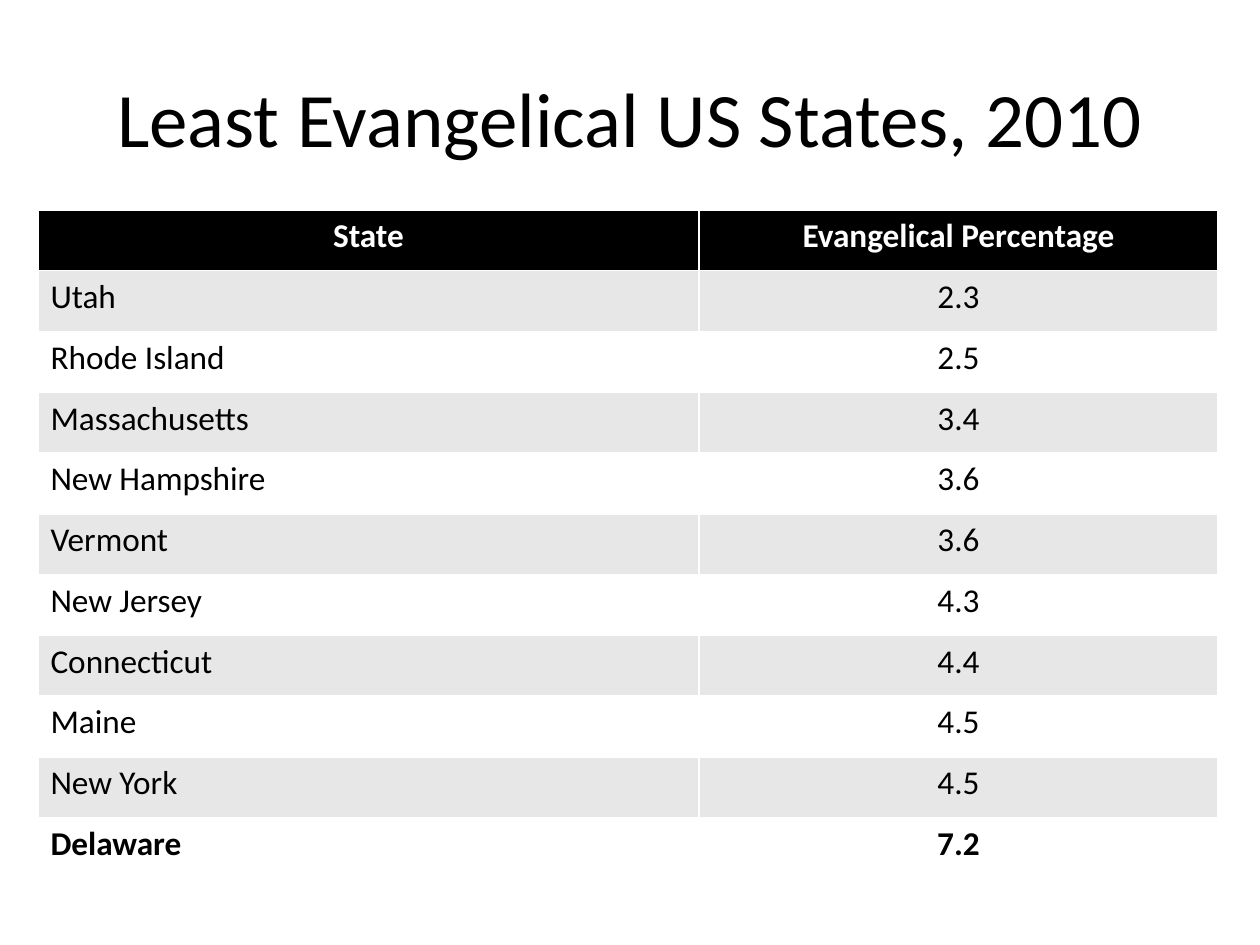
from pptx import Presentation
from pptx import util as u
from pptx.dml.color import RGBColor
from pptx.enum import text

PX = 914400 // 126
FONT = "Calibri"
COLORS = {"black": "000000", "white": "FFFFFF", "band": "E7E7E7"}

TITLE = "Least Evangelical US States, 2010"
ROWS = [
    ("State", "Evangelical Percentage"),
    ("Utah", "2.3"),
    ("Rhode Island", "2.5"),
    ("Massachusetts", "3.4"),
    ("New Hampshire", "3.6"),
    ("Vermont", "3.6"),
    ("New Jersey", "4.3"),
    ("Connecticut", "4.4"),
    ("Maine", "4.5"),
    ("New York", "4.5"),
    ("Delaware", "7.2"),
]
LAST = len(ROWS) - 1

TITLE_BOX = (63, 38, 1134, 157)
TABLE_LEFT, TABLE_TOP = 38, 210
COLUMN_WIDTHS = (661, 519)
UPPER_HEIGHT, LAST_HEIGHT = 608, 82  # all rows but the last, then the last


def rgb(name):
    return RGBColor.from_string(COLORS[name])


def format_text(frame, size, color, centered, bold=False):
    para = frame.paragraphs[0]
    para.alignment = text.PP_ALIGN.CENTER if centered else text.PP_ALIGN.LEFT
    font = para.runs[0].font
    font.name, font.size, font.bold = FONT, u.Pt(size), bold
    font.color.rgb = rgb(color)


def add_title(page):
    title = page.shapes.title
    title.left, title.top, title.width, title.height = (n * PX for n in TITLE_BOX)
    title.text_frame.text = TITLE
    title.text_frame.vertical_anchor = text.MSO_ANCHOR.MIDDLE
    format_text(title.text_frame, 44, "black", centered=True)


def add_states_table(page):
    table = page.shapes.add_table(
        len(ROWS), len(COLUMN_WIDTHS), TABLE_LEFT * PX, TABLE_TOP * PX,
        sum(COLUMN_WIDTHS) * PX, (UPPER_HEIGHT + LAST_HEIGHT) * PX).table
    table.last_row = True
    for column, width in zip(table.columns, COLUMN_WIDTHS):
        column.width = width * PX
    for r, values in enumerate(ROWS):
        header = r == 0
        table.rows[r].height = LAST_HEIGHT * PX if r == LAST else UPPER_HEIGHT * PX // LAST
        fill = "black" if header else "band" if r % 2 else "white"
        for c, value in enumerate(values):
            cell = table.cell(r, c)
            cell.fill.solid()
            cell.fill.fore_color.rgb = rgb(fill)
            cell.text_frame.text = value
            format_text(cell.text_frame, 19, "white" if header else "black",
                        centered=header or c == 1, bold=r in (0, LAST))


def main():
    deck = Presentation()
    deck.slide_width, deck.slide_height = u.Inches(10), u.Inches(7.5)
    page = deck.slides.add_slide(deck.slide_layouts[5])
    add_title(page)
    add_states_table(page)
    deck.save("out.pptx")


if __name__ == "__main__":
    main()
